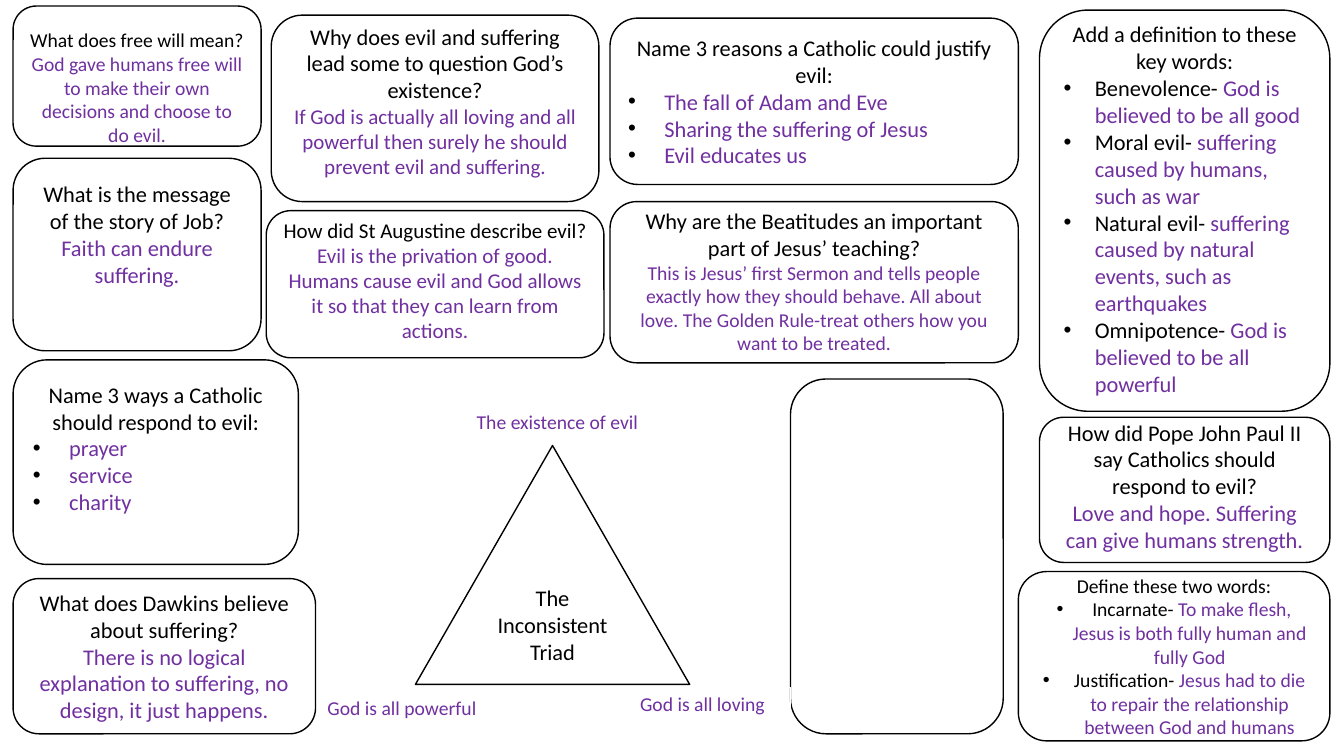
from dataclasses import dataclass

from lxml.etree import SubElement
from pptx import Presentation
from pptx.dml.color import RGBColor
from pptx.enum.shapes import MSO_SHAPE as Preset
from pptx.enum.text import MSO_ANCHOR as Anchor, MSO_AUTO_SIZE as AutoSize, PP_ALIGN as Align
from pptx.oxml.ns import qn
from pptx.util import Inches, Pt

GRID_ROWS = 75
SLIDE_WIDTH, SLIDE_HEIGHT = Inches(13.33), Inches(7.5)
CELL = SLIDE_HEIGHT // GRID_ROWS


@dataclass(frozen=True)
class Theme:
    font: str = "Calibri"
    ink: RGBColor = RGBColor(0, 0, 0)
    answer: RGBColor = RGBColor(0x70, 0x30, 0xA0)
    paper: RGBColor = RGBColor(255, 255, 255)
    large: int = 16
    medium: int = 15
    small: int = 14
    outline: float = 1
    label_outline: float = 0.75


THEME = Theme()


@dataclass(frozen=True)
class Line:
    runs: tuple
    size: int = THEME.large
    align: Align = Align.CENTER
    bulleted: bool = False


def question(wording, size=THEME.large):
    return Line(((wording, THEME.ink),), size)


def answer(wording, size=THEME.large, align=Align.CENTER):
    return Line(((wording, THEME.answer),), size, align)


def bullet(term, wording, size=THEME.large, align=Align.LEFT):
    return Line(((term, THEME.ink), (wording, THEME.answer)), size, align, True)


def cells(count):
    return round(count * CELL)


def add_bullet_mark(paragraph):
    properties = paragraph._p.get_or_add_pPr()
    indent = cells(3.1)
    properties.set("marL", str(indent))
    properties.set("indent", str(-indent))
    SubElement(properties, qn("a:buFont"), typeface="Arial")
    SubElement(properties, qn("a:buChar"), char="•")


def write_lines(frame, lines):
    for index, line in enumerate(lines):
        paragraph = frame.add_paragraph() if index else frame.paragraphs[0]
        paragraph.alignment = line.align
        if line.bulleted:
            add_bullet_mark(paragraph)
        for wording, colour in line.runs:
            run = paragraph.add_run()
            run.text = wording
            run.font.name = THEME.font
            run.font.size = Pt(line.size)
            run.font.color.rgb = colour


def add_panel(slide, area, lines=(), shift=0, preset=Preset.ROUNDED_RECTANGLE):
    panel = slide.shapes.add_shape(preset, *map(cells, area))
    panel.shadow.inherit = False
    panel.fill.solid()
    panel.fill.fore_color.rgb = THEME.paper
    panel.line.color.rgb = THEME.ink
    panel.line.width = Pt(THEME.outline)
    frame = panel.text_frame
    frame.word_wrap = True
    frame.vertical_anchor = Anchor.MIDDLE
    frame.margin_top = cells(max(0, 2 * shift))
    frame.margin_bottom = cells(max(0, -2 * shift))
    write_lines(frame, lines)


def add_label(slide, area, wording):
    label = slide.shapes.add_textbox(*map(cells, area))
    label.line.color.rgb = THEME.paper
    label.line.width = Pt(THEME.label_outline)
    frame = label.text_frame
    frame.word_wrap = True
    frame.auto_size = AutoSize.SHAPE_TO_FIT_TEXT
    write_lines(frame, [answer(wording, THEME.small, Align.LEFT)])


def add_left_column(slide):
    add_panel(slide, (1.3, 0.6, 24.6, 13.9), [
        question("What does free will mean?", THEME.small),
        answer("God gave humans free will to make their own decisions and choose to do evil.", THEME.small),
    ], shift=1.1)
    add_panel(slide, (1.3, 15.7, 24.6, 19.1), [
        question("What is the message of the story of Job?"),
        answer("Faith can endure suffering."),
    ], shift=-2)
    add_panel(slide, (1.3, 35.7, 28.3, 20.3), [
        question("Name 3 ways a Catholic should respond to evil:"),
        *(bullet(" ", way) for way in ("prayer", "service", "charity")),
    ], shift=-1.4)
    add_panel(slide, (1.3, 57.4, 30, 15.4), [
        question("What does Dawkins believe about suffering?"),
        answer("There is no logical explanation to suffering, no design, it just happens."),
    ])


def add_middle_columns(slide):
    add_panel(slide, (26.9, 1.5, 32.5, 18.5), [
        question("Why does evil and suffering lead some to question God’s"),
        question("existence?"),
        answer("If God is actually all loving and all powerful then surely he should prevent "
               "evil and suffering.", THEME.medium),
    ], shift=-0.75)
    add_panel(slide, (26.4, 20.9, 33.5, 14.6), [
        question("How did St Augustine describe evil?", THEME.medium),
        answer("Evil is the privation of good. Humans cause evil and God allows it so that "
               "they can learn from actions.", THEME.medium),
    ], shift=-0.4)
    reasons = ("The fall of Adam and Eve", "Sharing the suffering of Jesus", "Evil educates us")
    add_panel(slide, (60.5, 1.8, 40.5, 16.5), [
        question("Name 3 reasons a Catholic could justify evil:"),
        *(bullet(" ", reason) for reason in reasons),
    ])
    add_panel(slide, (60.5, 20, 40.5, 16), [
        question("Why are the Beatitudes an important part of Jesus’ teaching?"),
        answer("This is Jesus’ first Sermon and tells people exactly how they should behave. "
               "All about love. The Golden Rule-treat others how you want to be treated.", THEME.small),
    ], shift=-0.15)
    add_panel(slide, (78.4, 37.6, 21.1, 35.2))


def add_right_column(slide):
    add_panel(slide, (103.1, 1, 28.8, 39.8), [
        question("Add a definition to these key words:"),
        bullet("Benevolence- ", "God is believed to be all good"),
        bullet("Moral evil- ", "suffering caused by humans, such as war"),
        bullet("Natural evil- ", "suffering caused by natural events, such as earthquakes"),
        bullet("Omnipotence- ", "God is believed to be all powerful"),
    ], shift=-0.2)
    add_panel(slide, (103.1, 41.4, 28.8, 14.4), [
        question("How did Pope John Paul II say Catholics should respond to evil?"),
        answer("Love and hope. Suffering can give humans strength."),
    ], shift=-0.4)
    add_panel(slide, (101, 56.7, 30.9, 16.8), [
        question("Define these two words:", THEME.small),
        bullet(" Incarnate- ", "To make flesh, Jesus is both fully human and fully God",
               THEME.small, Align.CENTER),
        bullet("Justification- ", "Jesus had to die to repair the relationship between God and humans",
               THEME.small, Align.CENTER),
    ])


def add_triad(slide):
    add_panel(slide, (41.2, 44.2, 27.2, 23.7), [question("The Inconsistent Triad")],
              preset=Preset.ISOSCELES_TRIANGLE)
    add_label(slide, (46.3, 40.2, 23.3, 3.4), "The existence of evil")
    add_label(slide, (31.5, 68.5, 23.3, 3.4), "God is all powerful")
    add_label(slide, (62.5, 68.2, 15.9, 3.4), "God is all loving")


def main():
    presentation = Presentation()
    presentation.slide_width, presentation.slide_height = SLIDE_WIDTH, SLIDE_HEIGHT
    slide = presentation.slides.add_slide(presentation.slide_layouts[6])
    add_left_column(slide)
    add_middle_columns(slide)
    add_right_column(slide)
    add_triad(slide)
    presentation.save("out.pptx")


if __name__ == "__main__":
    main()
